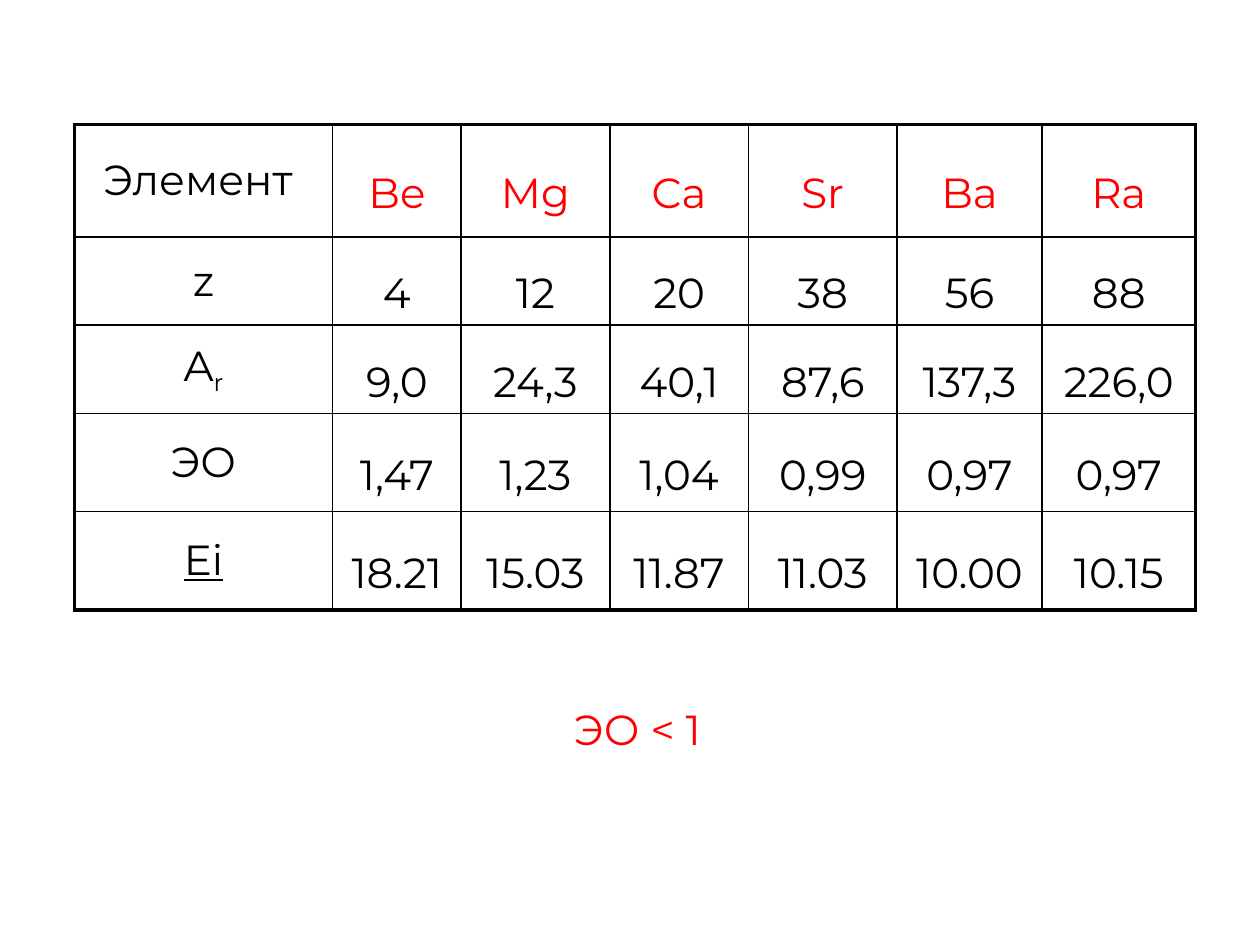
from pptx import Presentation
from pptx.dml.color import RGBColor
from pptx.enum.text import MSO_ANCHOR, PP_ALIGN
from pptx.oxml import parse_xml
from pptx.oxml.ns import nsdecls
from pptx.util import Inches, Pt

BLACK = RGBColor(0, 0, 0)
RED = RGBColor(255, 0, 0)
FONT = "Montserrat"
THIN, THICK = 1, 2.25

ROWS = [
    ("Элемент ", "Be", "Mg", "Ca", "Sr", "Ba", "Ra"),
    ("z", "4", "12", "20", "38", "56", "88"),
    ("A", "9,0", "24,3", "40,1", "87,6", "137,3", "226,0"),
    ("ЭО", "1,47", "1,23", "1,04", "0,99", "0,97", "0,97"),
    ("Ei", "18.21", "15.03", "11.87", "11.03", "10.00", "10.15"),
]
WIDTHS = [2.05, 1.02, 1.18, 1.1, 1.18, 1.15, 1.22]
HEIGHTS = [0.89, 0.7, 0.7, 0.78, 0.78]
MASS_ROW, ENERGY_ROW = 2, 4


def style(para, color):
    para.alignment = PP_ALIGN.CENTER
    para.font.name = FONT
    para.font.size = Pt(24)
    para.font.color.rgb = color


def set_edges(cell, row, col):
    """Draw the cell borders, thick along the outside of the table."""
    outer = {
        "L": col == 0,
        "R": col == len(WIDTHS) - 1,
        "T": row == 0,
        "B": row == len(HEIGHTS) - 1,
    }
    props = cell._tc.get_or_add_tcPr()
    for place, (side, edge) in enumerate(outer.items()):
        width = Pt(THICK if edge else THIN)
        props.insert(place, parse_xml(
            f'<a:ln{side} {nsdecls("a")} w="{width}"><a:solidFill>'
            f'<a:srgbClr val="{BLACK}"/></a:solidFill></a:ln{side}>'))


def set_pads(cell, side, end):
    cell.margin_left = cell.margin_right = Inches(side)
    cell.margin_top = cell.margin_bottom = Inches(end)


def fill_cell(cell, row, col):
    cell.fill.background()
    cell.vertical_anchor = MSO_ANCHOR.MIDDLE
    para = cell.text_frame.paragraphs[0]
    run = para.add_run()
    run.text = ROWS[row][col]
    style(para, RED if row == 0 and col else BLACK)
    if col:
        para.line_spacing = 1.5
        set_pads(cell, 0.07 if col == len(WIDTHS) - 1 else 0, 0)
    else:
        set_pads(cell, 0.1, 0.05)
        if row == MASS_ROW:
            sub = para.add_run()
            sub.text = "r"
            sub.font._element.set("baseline", "-25000")
        elif row == ENERGY_ROW:
            run.font.underline = True
    set_edges(cell, row, col)


def add_grid(slide):
    frame = slide.shapes.add_table(
        len(HEIGHTS), len(WIDTHS), Inches(0.59), Inches(0.99),
        Inches(sum(WIDTHS)), Inches(sum(HEIGHTS)))
    table = frame.table
    table.first_row = table.horz_banding = False
    for col, width in enumerate(WIDTHS):
        table.columns[col].width = Inches(width)
    for row, height in enumerate(HEIGHTS):
        table.rows[row].height = Inches(height)
        for col in range(len(WIDTHS)):
            fill_cell(table.cell(row, col), row, col)


def add_note(slide):
    box = slide.shapes.add_textbox(
        Inches(4.37), Inches(5.32), Inches(1.65), Inches(0.71))
    frame = box.text_frame
    frame.word_wrap = True
    frame.vertical_anchor = MSO_ANCHOR.BOTTOM
    frame.margin_right = Inches(0.37)
    para = frame.paragraphs[0]
    para.text = "ЭО < 1"
    style(para, RED)


def main():
    deck = Presentation()
    deck.slide_width, deck.slide_height = Inches(10), Inches(7.5)
    slide = deck.slides.add_slide(deck.slide_layouts[6])
    add_grid(slide)
    add_note(slide)
    deck.save("out.pptx")


if __name__ == "__main__":
    main()
